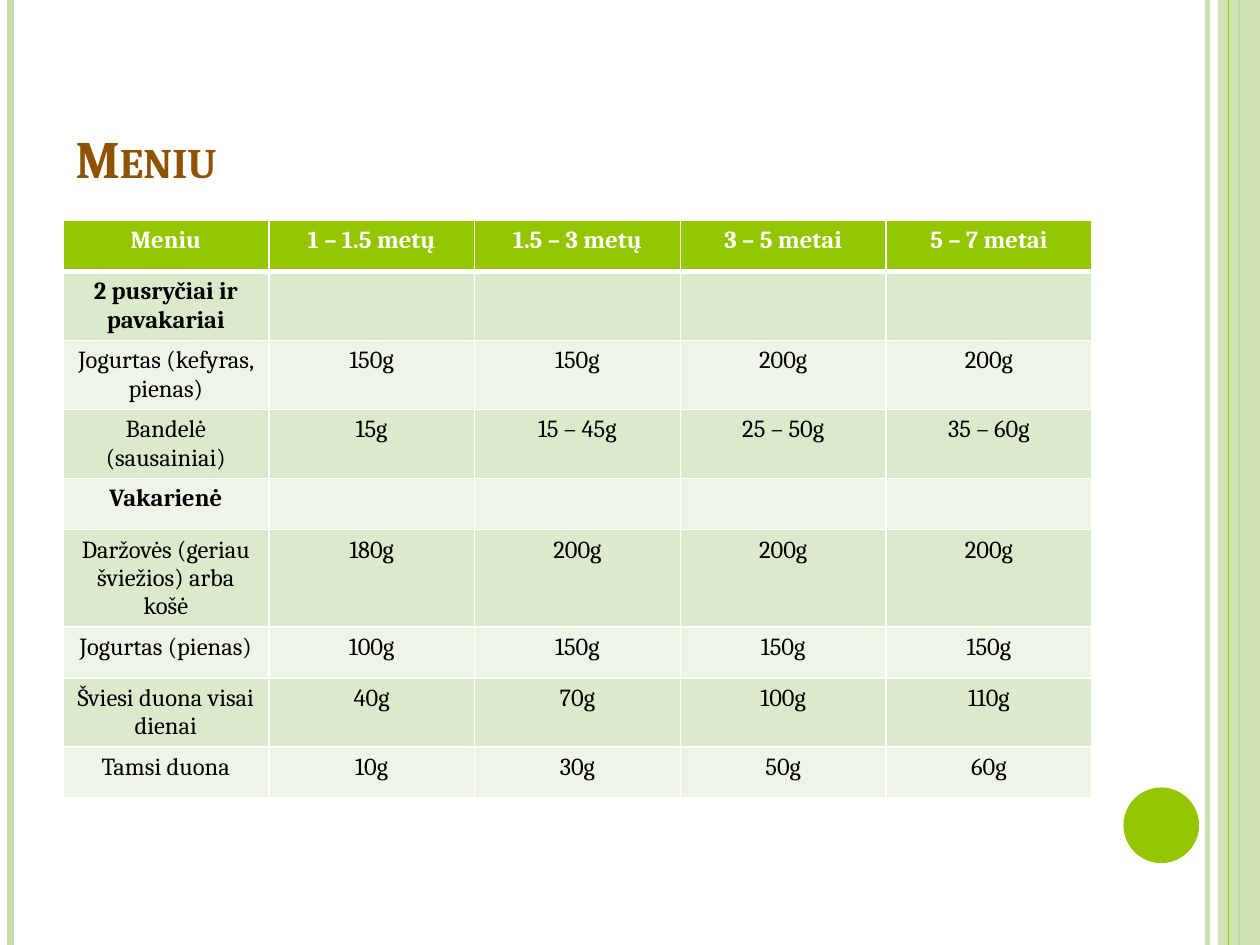
from lxml import etree
from pptx import Presentation
from pptx.dml.color import RGBColor
from pptx.enum.shapes import MSO_CONNECTOR, MSO_SHAPE
from pptx.enum.text import MSO_ANCHOR, MSO_AUTO_SIZE, PP_ALIGN
from pptx.oxml.ns import qn
from pptx.util import Pt

STRAIGHT = MSO_CONNECTOR.STRAIGHT
RECTANGLE, OVAL = MSO_SHAPE.RECTANGLE, MSO_SHAPE.OVAL
BOTTOM = MSO_ANCHOR.BOTTOM
NO_AUTOFIT = MSO_AUTO_SIZE.NONE
LEFT, CENTER = PP_ALIGN.LEFT, PP_ALIGN.CENTER

WIDTH, HEIGHT = 720, 540
TITLE_ONLY = 5
COLORS = {
    "white": "FFFFFF",
    "black": "000000",
    "green": "94C600",
    "pale": "C8DFAB",
    "brown": "8F5201",
    "band": "DCEACC",
    "light_band": "EEF5E7",
}
STRIPES = [
    (690, "pale", 3, 93),
    (6, "pale", 4.5, 100),
    (708, "green", 1.5, 100),
]
LINE_HEIGHTS = {1: 29.2, 2: 39.4, 3: 55.6}
MENU = [
    (1, ["Meniu", "1 – 1.5 metų", "1.5 – 3 metų", "3 – 5 metai", "5 – 7 metai"]),
    (2, ["2 pusryčiai ir pavakariai", "", "", "", ""]),
    (2, ["Jogurtas (kefyras, pienas)", "150g", "150g", "200g", "200g"]),
    (2, ["Bandelė (sausainiai)", "15g", "15 – 45g", "25 – 50g", "35 – 60g"]),
    (1, ["Vakarienė", "", "", "", ""]),
    (3, ["Daržovės (geriau šviežios) arba košė", "180g", "200g", "200g", "200g"]),
    (1, ["Jogurtas (pienas)", "100g", "150g", "150g", "150g"]),
    (2, ["Šviesi duona visai dienai", "40g", "70g", "100g", "110g"]),
    (1, ["Tamsi duona", "10g", "30g", "50g", "60g"]),
]


class SlideBuilder:
    font_name = "Cambria"

    def __init__(self, slide):
        self.slide = slide

    def color(self, name):
        return RGBColor.from_string(COLORS[name])

    def set_opacity(self, element, percent):
        if percent < 100:
            for color in element.iter(qn("a:srgbClr")):
                etree.SubElement(color, qn("a:alpha"), val=str(percent * 1000))

    def stripe(self, x, color, width, opacity=100):
        stripe = self.slide.shapes.add_connector(
            STRAIGHT, Pt(x), Pt(0), Pt(x), Pt(HEIGHT))
        stripe.line.width = Pt(width)
        stripe.line.color.rgb = self.color(color)
        properties = stripe._element.spPr
        self.set_opacity(properties, opacity)
        etree.SubElement(properties, qn("a:effectLst"))

    def shape(self, kind, left, top, width, height, color, opacity=100):
        shape = self.slide.shapes.add_shape(
            kind, Pt(left), Pt(top), Pt(width), Pt(height))
        shape.shadow.inherit = False
        shape.fill.solid()
        shape.fill.fore_color.rgb = self.color(color)
        shape.line.fill.background()
        self.set_opacity(shape._element.spPr, opacity)

    def text(self, frame, wording, size, color, bold, alignment):
        paragraph = frame.paragraphs[0]
        paragraph.alignment = alignment
        run = paragraph.add_run()
        run.text = wording
        formats = {"name": self.font_name, "size": Pt(size), "bold": bold}
        for attribute, value in formats.items():
            setattr(run.font, attribute, value)
        run.font.color.rgb = self.color(color)
        return run

    def title(self, wording, left, top, width, height):
        title = self.slide.shapes.title
        place = {"left": left, "top": top, "width": width, "height": height}
        for attribute, value in place.items():
            setattr(title, attribute, Pt(value))
        frame = title.text_frame
        frame.auto_size = NO_AUTOFIT
        frame.vertical_anchor = BOTTOM
        run = self.text(frame, wording, 30, "brown", True, LEFT)
        run.font._element.set("cap", "small")

    def borders(self, cell, widths):
        properties = cell._tc.get_or_add_tcPr()
        for side, width in widths.items():
            border = etree.SubElement(
                properties, qn(f"a:ln{side}"), w=str(Pt(width)))
            fill = etree.SubElement(border, qn("a:solidFill"))
            etree.SubElement(fill, qn("a:srgbClr"), val=COLORS["white"])

    def table(self, rows, left, top, width):
        heights = [LINE_HEIGHTS[lines] for lines, _ in rows]
        columns = len(rows[0][1])
        table = self.slide.shapes.add_table(
            len(rows), columns, Pt(left), Pt(top),
            Pt(width), Pt(sum(heights))).table
        for column in table.columns:
            column.width = Pt(width / columns)
        for index, (_, wordings) in enumerate(rows):
            table.rows[index].height = Pt(heights[index])
            is_header = index == 0
            is_section = not any(wordings[1:])
            fill = "green" if is_header else "band" if index % 2 else "light_band"
            widths = {"L": 1, "R": 1, "T": 3 if index == 1 else 1,
                      "B": 3 if is_header else 1}
            for column, wording in enumerate(wordings):
                cell = table.cell(index, column)
                self.borders(cell, widths)
                cell.fill.solid()
                cell.fill.fore_color.rgb = self.color(fill)
                if wording:
                    self.text(cell.text_frame, wording, 14,
                              "white" if is_header else "black",
                              is_header or is_section, CENTER)


def main():
    presentation = Presentation()
    presentation.slide_width, presentation.slide_height = Pt(WIDTH), Pt(HEIGHT)
    layout = presentation.slide_layouts[TITLE_ONLY]
    builder = SlideBuilder(presentation.slides.add_slide(layout))
    for stripe in STRIPES:
        builder.stripe(*stripe)
    builder.shape(RECTANGLE, 696, 0, 24, HEIGHT, "pale", 87)
    builder.stripe(702, "green", 0.75)
    builder.shape(OVAL, 642, 450, 43.2, 43.2, "green")
    builder.title("Meniu", 36, 21.6, 588, 90)
    builder.table(MENU, 36, 126, 588)
    presentation.save("out.pptx")


if __name__ == "__main__":
    main()
